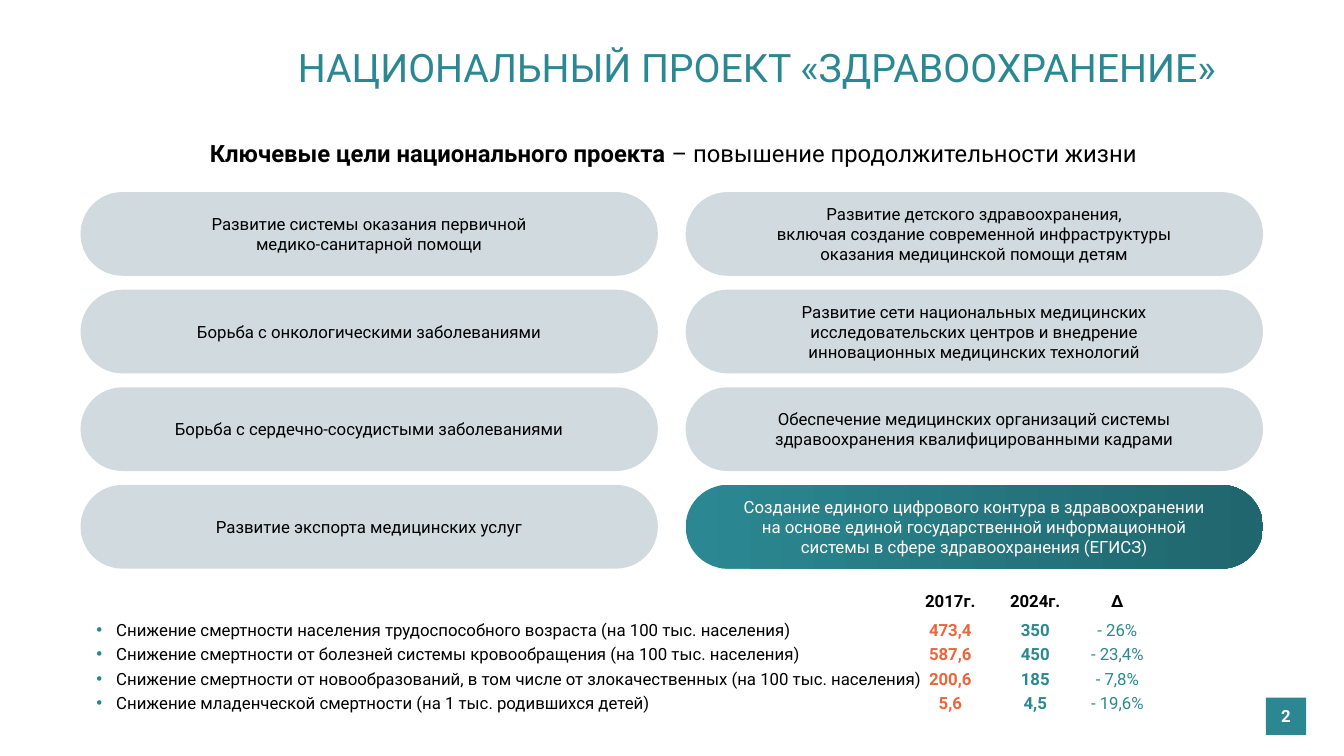
from copy import deepcopy

from lxml.etree import SubElement
from pptx import Presentation
from pptx.dml.color import RGBColor
from pptx.enum.shapes import MSO_SHAPE as Shape
from pptx.enum.text import MSO_ANCHOR as Anchor, PP_ALIGN as Align
from pptx.oxml.ns import qn
from pptx.util import Cm, Pt

TEAL = RGBColor(0x2B, 0x88, 0x92)
DARK_TEAL = RGBColor(0x20, 0x66, 0x6E)
GREY = RGBColor(0xD0, 0xDA, 0xDF)
ORANGE = RGBColor(0xEC, 0x66, 0x3C)
BLACK = RGBColor(0, 0, 0)
WHITE = RGBColor(0xFF, 0xFF, 0xFF)

TITLE = "НАЦИОНАЛЬНЫЙ ПРОЕКТ «ЗДРАВООХРАНЕНИЕ»"
GOAL_LABEL = "Ключевые цели национального проекта "
GOAL = "– повышение продолжительности жизни"
PAGE = "2"
PROJECTS = [
    [
        "Развитие системы оказания первичной\nмедико-санитарной помощи",
        "Борьба с онкологическими заболеваниями",
        "Борьба с сердечно-сосудистыми заболеваниями",
        "Развитие экспорта медицинских услуг",
    ],
    [
        "Развитие детского здравоохранения,\nвключая создание современной инфраструктуры\n"
        "оказания медицинской помощи детям",
        "Развитие сети национальных медицинских\nисследовательских центров и внедрение\n"
        "инновационных медицинских технологий",
        "Обеспечение медицинских организаций системы\nздравоохранения квалифицированными кадрами",
        "Создание единого цифрового контура в здравоохранении\n"
        "на основе единой государственной информационной\n"
        "системы в сфере здравоохранения (ЕГИСЗ)",
    ],
]
HIGHLIGHT = (1, 3)
INDICATORS = [
    "Снижение смертности населения трудоспособного возраста (на 100 тыс. населения)",
    "Снижение смертности от болезней системы кровообращения (на 100 тыс. населения)",
    "Снижение смертности от новообразований, в том числе от злокачественных (на 100 тыс. населения)",
    "Снижение младенческой смертности (на 1 тыс. родившихся детей)",
]
COLUMNS = [
    ("2017г.", 23.95, ORANGE, True, ["473,4", "587,6", "200,6", "5,6"]),
    ("2024г.", 26.09, TEAL, True, ["350", "450", "185", "4,5"]),
    ("∆", 28.16, TEAL, False, ["- 26%", "- 23,4%", "- 7,8%", "- 19,6%"]),
]

PILL_LEFT, PILL_TOP = 2.03, 4.84
PILL_WIDTH, PILL_HEIGHT = 14.55, 2.11
PILL_STEP_X, PILL_STEP_Y = 15.25, 2.46
HEADER_TOP, HEADER_HEIGHT = 14.76, 0.76
VALUES_TOP, VALUES_HEIGHT = 15.49, 2.64
COLUMN_WIDTH = 2.4


def style_runs(paragraph, size=12, color=BLACK, bold=False):
    for run in paragraph.runs:
        for name, value in {"name": "Roboto", "size": Pt(size), "bold": bold}.items():
            setattr(run.font, name, value)
        run.font.color.rgb = color
    for line_break in paragraph._p.findall(qn("a:br")):
        line_break.insert(0, deepcopy(paragraph.runs[0]._r.rPr))


def write(shape, lines, align=Align.CENTER, anchor=Anchor.TOP, wrap=True, **font):
    frame = shape.text_frame
    frame.word_wrap = wrap
    frame.vertical_anchor = anchor
    for index, line in enumerate(lines):
        paragraph = frame.add_paragraph() if index else frame.paragraphs[0]
        paragraph.text = line
        paragraph.alignment = align
        if index:
            paragraph.space_before = Pt(3)
        style_runs(paragraph, **font)
    return frame


def add_text(slide, box, lines, **options):
    return write(slide.shapes.add_textbox(*map(Cm, box)), lines, **options)


def add_block(slide, kind, box, text, fill, **font):
    shape = slide.shapes.add_shape(kind, *map(Cm, box))
    shape.shadow.inherit = False
    shape.line.fill.background()
    shape.fill.solid()
    shape.fill.fore_color.rgb = fill
    write(shape, [text], anchor=Anchor.MIDDLE, **font)
    return shape


def add_bullet(paragraph):
    properties = paragraph._p.get_or_add_pPr()
    properties.set("marL", str(Cm(0.5)))
    properties.set("indent", str(-Cm(0.5)))
    color = SubElement(properties, qn("a:buClr"))
    SubElement(color, qn("a:srgbClr"), val=str(TEAL))
    SubElement(properties, qn("a:buFont"), typeface="Arial")
    SubElement(properties, qn("a:buChar"), char="•")


def add_projects(slide):
    for column, projects in enumerate(PROJECTS):
        for row, text in enumerate(projects):
            highlighted = (column, row) == HIGHLIGHT
            box = (PILL_LEFT + column * PILL_STEP_X, PILL_TOP + row * PILL_STEP_Y,
                   PILL_WIDTH, PILL_HEIGHT)
            pill = add_block(slide, Shape.ROUNDED_RECTANGLE, box, text, GREY,
                             color=WHITE if highlighted else BLACK)
            pill.adjustments[0] = 0.5
            if highlighted:
                pill.fill.gradient()
                pill.fill.gradient_angle = 0
                for stop, color in zip(pill.fill.gradient_stops, (TEAL, DARK_TEAL)):
                    stop.color.rgb = color


def add_indicators(slide):
    frame = add_text(slide, (2.18, VALUES_TOP, 21.51, VALUES_HEIGHT), INDICATORS, align=Align.LEFT)
    for paragraph in frame.paragraphs:
        add_bullet(paragraph)
    for header, center, color, bold, values in COLUMNS:
        left = center - COLUMN_WIDTH / 2
        add_text(slide, (left, HEADER_TOP, COLUMN_WIDTH, HEADER_HEIGHT), [header],
                 wrap=False, bold=True)
        add_text(slide, (left, VALUES_TOP, COLUMN_WIDTH, VALUES_HEIGHT), values,
                 wrap=False, color=color, bold=bold)


def main():
    presentation = Presentation()
    presentation.slide_width, presentation.slide_height = Cm(33.87), Cm(19.05)
    slide = presentation.slides.add_slide(presentation.slide_layouts[6])

    title = add_text(slide, (2.41, 0, 28.47, 3.51), [TITLE], align=Align.RIGHT,
                     anchor=Anchor.MIDDLE, size=28, color=TEAL)
    title.paragraphs[0].line_spacing = 0.9
    add_block(slide, Shape.RECTANGLE, (31.9, 17.58, 1.02, 0.94), PAGE, TEAL,
              color=WHITE, bold=True)

    goal = add_text(slide, (1.22, 3.38, 31.5, 0.99), [GOAL_LABEL]).paragraphs[0]
    goal.add_run().text = GOAL
    style_runs(goal, size=17)
    goal.runs[0].font.bold = True

    add_projects(slide)
    add_indicators(slide)
    presentation.save("out.pptx")


if __name__ == "__main__":
    main()
